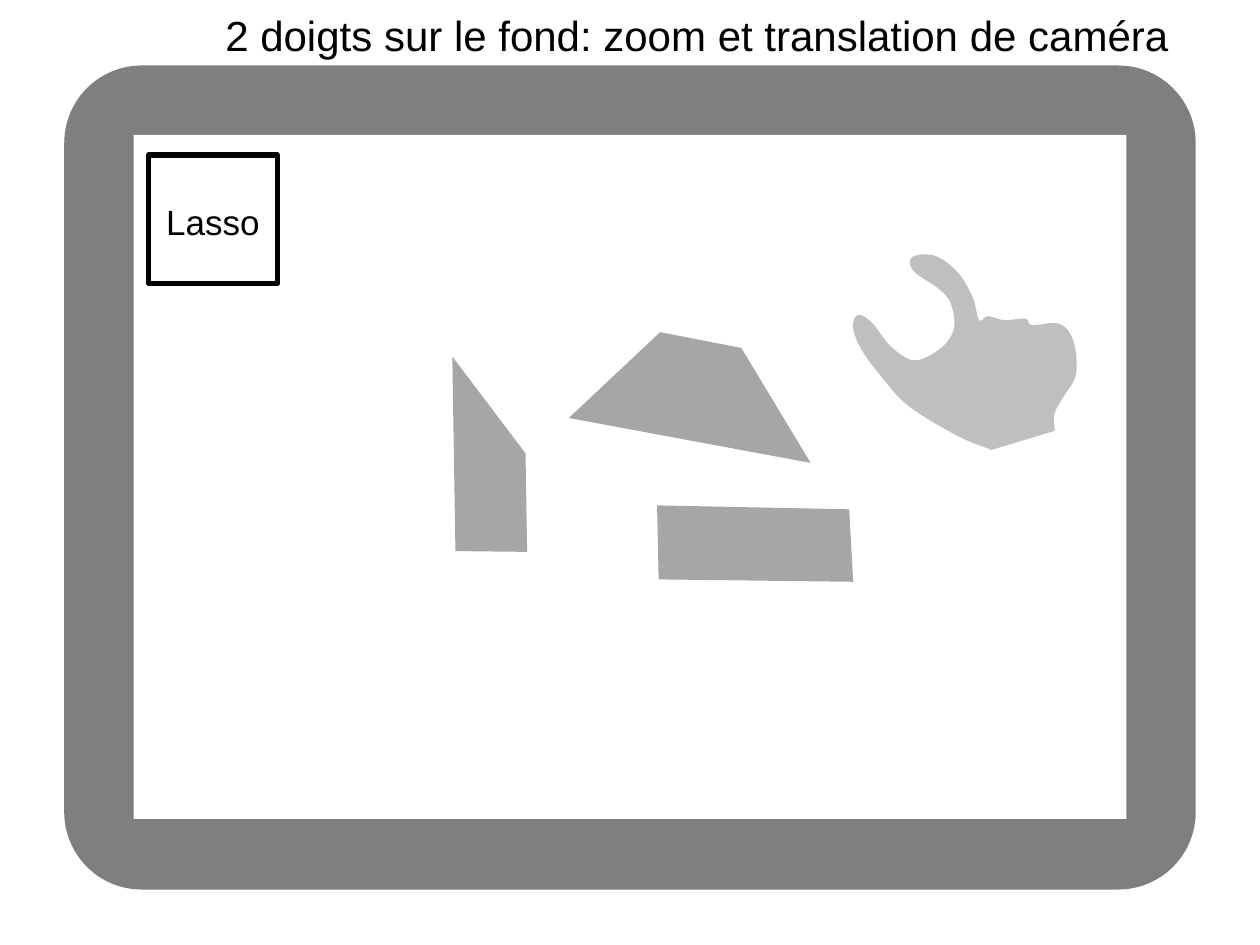
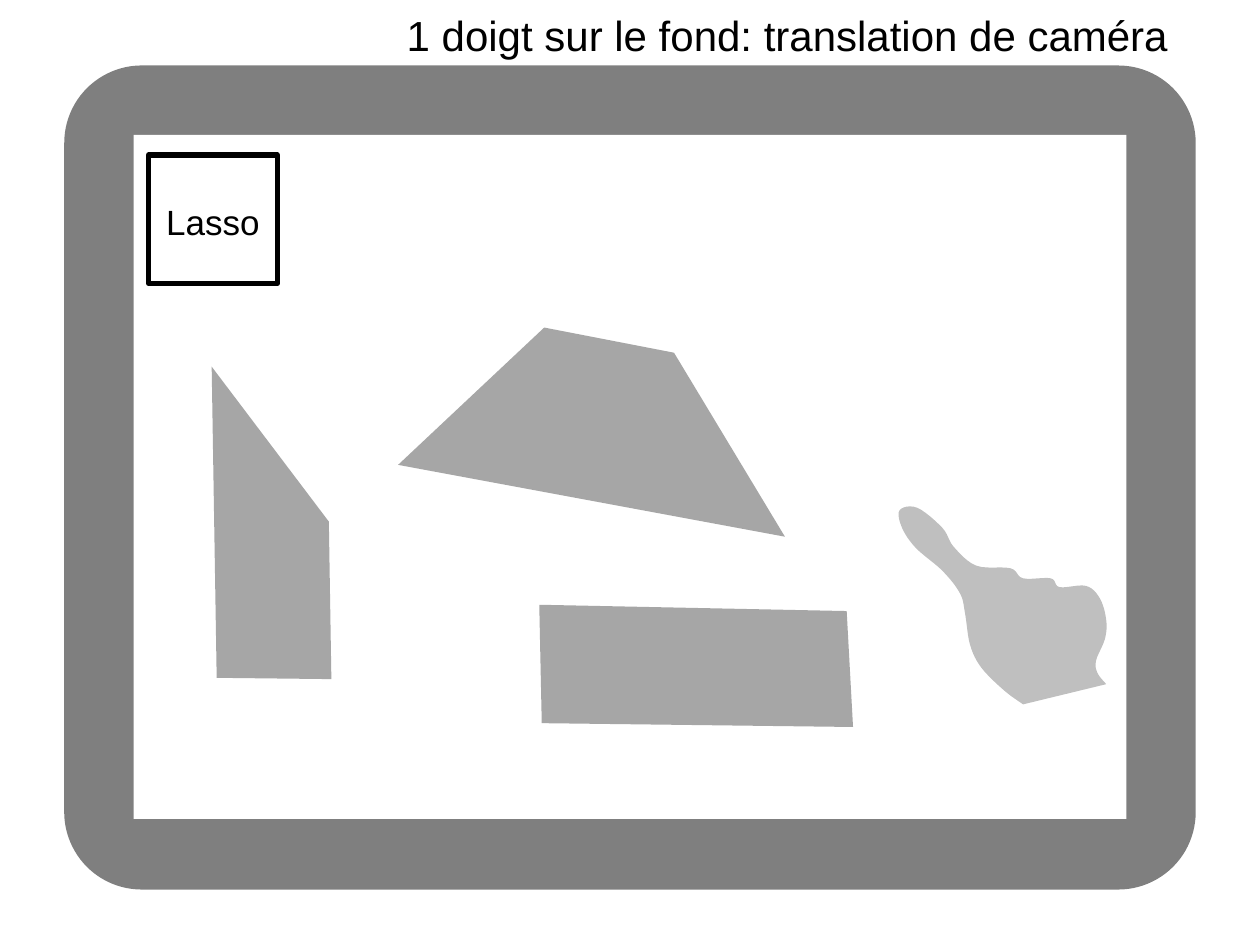
"""Builds two slides of a touch tablet that show finger moves for the camera."""
import lxml.etree
import pptx
import pptx.dml.color
import pptx.enum.shapes
import pptx.enum.text
import pptx.oxml.ns
import pptx.util

BLACK = pptx.dml.color.RGBColor(0x00, 0x00, 0x00)
WHITE = pptx.dml.color.RGBColor(0xFF, 0xFF, 0xFF)
GREY = pptx.dml.color.RGBColor(0xA6, 0xA6, 0xA6)
FONT = "Arial"
PX = 9144
WIDTH, HEIGHT = 1000, 750
RIGHT = 943
STEPS = 6

RECT = pptx.enum.shapes.MSO_SHAPE.RECTANGLE
ROUND = pptx.enum.shapes.MSO_SHAPE.ROUNDED_RECTANGLE
LEFT = pptx.enum.text.PP_ALIGN.LEFT
CENTER = pptx.enum.text.PP_ALIGN.CENTER

BLOCKS = {
    "tower": [(172, 538), (168, 291), (261, 414), (263, 539)],
    "roof": [(316, 369), (623, 426), (535, 280), (432, 260)],
    "brick": [(428, 480), (430, 574), (677, 577), (672, 485)],
}

PINCH = {
    "heel": [(787, 357), (760, 346), (722, 323)],
    "thumb": [(702, 302), (684, 278), (677, 260), (681, 250), (692, 256), (707, 275)],
    "web": [(726, 286), (747, 276), (757, 261), (755, 242)],
    "finger": [(746, 230), (725, 215), (724, 204), (742, 203), (760, 216), (772, 236)],
    "fist": [(777, 254), (784, 251), (797, 254), (814, 253), (819, 258), (841, 257)],
    "side": [(852, 271), (854, 297), (844, 315)],
    "wrist": [(837, 328), (837, 342)],
}

POINT = {
    "heel": [(812, 559), (797, 548), (779, 530), (770, 512)],
    "thumb": [(766, 487), (762, 471), (748, 453)],
    "finger": [(727, 435), (716, 419), (714, 405), (728, 403), (748, 419), (757, 434)],
    "fist": [(775, 449), (802, 451), (812, 459), (834, 459), (841, 466), (862, 465)],
    "side": [(873, 475), (878, 492), (877, 507)],
    "wrist": [(870, 524), (871, 534), (878, 543)],
}


def blend(a, b, c, d, t):
    """Gives the spline value between b and c at the share t."""
    bend = 2 * a - 5 * b + 4 * c - d
    twist = 3 * (b - c) + d - a
    return b + t * (c - a + t * (bend + t * twist)) / 2


def curve(parts):
    """Joins the parts of a hand and rounds the outline between their points."""
    knots = [knot for part in parts.values() for knot in part]
    knots = [knots[0], *knots, knots[-1]]
    points = []
    for four in zip(knots, knots[1:], knots[2:], knots[3:]):
        xs, ys = zip(*four)
        for step in range(STEPS):
            points.append((blend(*xs, step / STEPS), blend(*ys, step / STEPS)))
    return points + [knots[-1]]


def zoom(block, scale=0.625):
    """Shrinks a block about the top left corner of the tower."""
    left, top = BLOCKS["tower"][1]
    return [(359 + (x - left) * scale, 283 + (y - top) * scale) for x, y in block]


class Deck:
    """Holds the style and the current slide."""

    def __init__(self):
        self.show = pptx.Presentation()
        self.show.slide_width = WIDTH * PX
        self.show.slide_height = HEIGHT * PX
        self.slide = None

    def start(self):
        self.slide = self.show.slides.add_slide(self.show.slide_layouts[6])

    def paint(self, shape, color, alpha=100, edge=0):
        shape.shadow.inherit = False
        shape.fill.solid()
        shape.fill.fore_color.rgb = color
        if alpha < 100:
            tint = shape._element.spPr.find(".//" + pptx.oxml.ns.qn("a:srgbClr"))
            lxml.etree.SubElement(tint, pptx.oxml.ns.qn("a:alpha"), val=str(alpha * 1000))
        if edge:
            shape.line.color.rgb = BLACK
            shape.line.width = pptx.util.Pt(edge)
        else:
            shape.line.fill.background()

    def box(self, kind, x, y, w, h, color, alpha=100, edge=0):
        shape = self.slide.shapes.add_shape(kind, x * PX, y * PX, w * PX, h * PX)
        self.paint(shape, color, alpha, edge)
        return shape

    def patch(self, points, color, alpha=100):
        first, *rest = [(round(x * PX), round(y * PX)) for x, y in points]
        pen = self.slide.shapes.build_freeform(*first)
        pen.add_line_segments(rest, close=True)
        self.paint(pen.convert_to_shape(), color, alpha)

    def label(self, text, x, y, w, h, size, align=LEFT):
        frame = self.slide.shapes.add_textbox(x * PX, y * PX, w * PX, h * PX).text_frame
        frame.word_wrap = False
        frame.auto_size = pptx.enum.text.MSO_AUTO_SIZE.SHAPE_TO_FIT_TEXT
        frame.text = text
        line = frame.paragraphs[0]
        line.alignment = align
        font = line.runs[0].font
        font.name, font.size = FONT, pptx.util.Pt(size)
        font.color.rgb = BLACK

    def tablet(self):
        self.box(ROUND, 51, 52, 898, 654, BLACK, 50).adjustments[0] = 0.094
        self.box(RECT, 106, 107, 788, 543, WHITE)

    def button(self):
        self.box(RECT, 118, 123, 102, 102, WHITE, edge=3)
        self.label("Lasso", 122, 154, 94, 44, 20, CENTER)

    def scene(self, title, width, blocks, hand):
        self.start()
        self.tablet()
        for block in blocks:
            self.patch(block, GREY)
        self.button()
        self.patch(curve(hand), BLACK, 25)
        self.label(title, RIGHT - width, 3, width, 51, 24)


def main():
    deck = Deck()
    large = BLOCKS.values()
    small = [zoom(block) for block in large]
    deck.scene("2 doigts sur le fond: zoom et translation de caméra", 774, small, PINCH)
    deck.scene("1 doigt sur le fond: translation de caméra", 630, large, POINT)
    deck.show.save("out.pptx")


if __name__ == "__main__":
    main()
